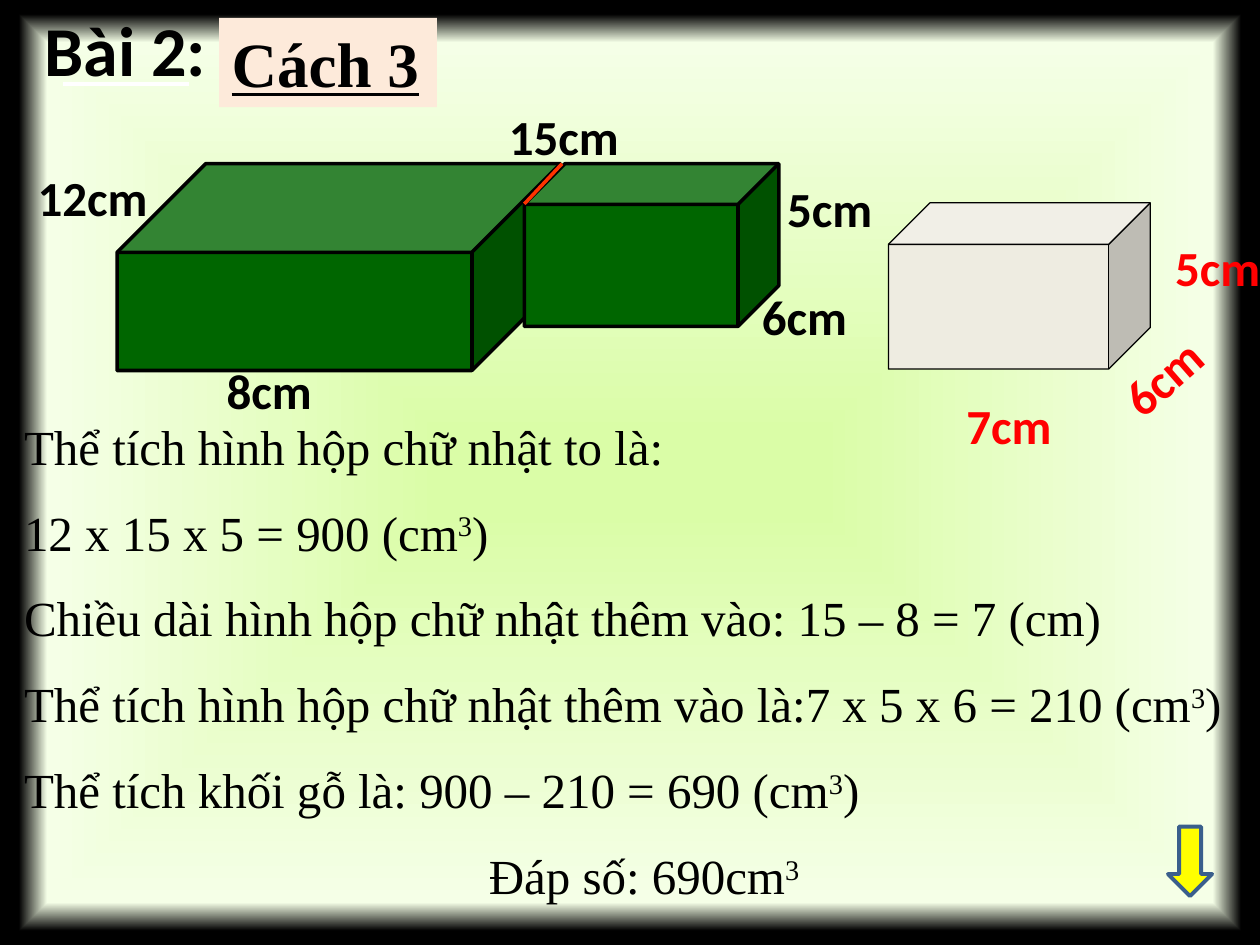
from lxml import etree
from pptx import Presentation
from pptx import util as u
from pptx.dml.color import RGBColor
from pptx.enum import shapes, text
from pptx.oxml import ns, parse_xml

# Content: positions and sizes in centimetres
BACKGROUND = [(8, "DAFDA7"), (91, "F5FFE7"), (97, "000000")]
HEADING = "Bài 2:"
METHOD = "Cách 3"
CUBES = [  # box, depth, fill, line width
    ((2.36, 3.3, 8.94, 4.17), 0.429, "006600", 2),
    ((10.57, 3.3, 5.13, 3.28), 0.25, "006600", 2),
    ((17.91, 4.09, 5.28, 3.35), 0.25, "EEECE1", 0.75),
]
LINES = [  # start, end, colour, width
    ((10.57, 4.11), (11.33, 3.3), "FF3300", 2),
    ((1.27, 1.7), (3.81, 1.7), "FFFFFF", 2.25),
]
LABEL_HEIGHT = 1.45
LABELS = [  # text, left, top, width, colour, rotation
    ("12cm", 0.51, 3.25, 3.81, "000000", 0),
    ("15cm", 10.01, 2.03, 4.09, "000000", 0),
    ("5cm", 15.62, 3.48, 2.49, "000000", 0),
    ("6cm", 15.11, 5.66, 2.31, "000000", 0),
    ("8cm", 4.32, 7.14, 2.34, "000000", 0),
    ("7cm", 19.23, 7.85, 2.46, "FF0000", 0),
    ("5cm", 23.44, 4.67, 2.46, "FF0000", 0),
    ("6cm", 22.2, 6.5, 3.35, "FF0000", 318.7),
]
SOLUTION = [  # text with ^ before a raised 3, left indent
    ("Thể tích hình hộp chữ nhật to là:", 0),
    ("12 x 15 x 5 = 900 (cm^3)", 0),
    ("Chiều dài hình hộp chữ nhật thêm vào: 15 – 8 = 7 (cm)", 0),
    ("Thể tích hình hộp chữ nhật thêm vào là:7 x 5 x 6 = 210 (cm^3)", 0),
    ("Thể tích khối gỗ là: 900 – 210 = 690 (cm^3)", 0),
    ("Đáp số: 690cm^3", 9.37),
]


def color(value):
    return RGBColor.from_string(value)


def lengths(values):
    return [u.Cm(value) for value in values]


def place(shape, box):
    shape.left, shape.top, shape.width, shape.height = lengths(box)


def setup_frame(shape, anchor=text.MSO_ANCHOR.TOP):
    frame = shape.text_frame
    frame.word_wrap = True
    frame.auto_size = text.MSO_AUTO_SIZE.NONE
    frame.vertical_anchor = anchor
    return frame


def style(paragraph, size, name, value="000000", bold=True):
    paragraph.alignment = text.PP_ALIGN.LEFT
    font = paragraph.font
    font.size, font.name, font.bold = u.Pt(size), name, bold
    font.color.rgb = color(value)


def add_shape(slide, kind, box, fill, line=None, width=0):
    shape = slide.shapes.add_shape(kind, *lengths(box))
    shape.shadow.inherit = False
    shape.fill.solid()
    shape.fill.fore_color.rgb = color(fill)
    if line:
        shape.line.color.rgb = color(line)
        shape.line.width = u.Pt(width)
    else:
        shape.line.fill.background()
    return shape


def set_background(slide):
    slide.background.fill.solid()
    properties = slide.background._cSld.bg.bgPr
    stops = "".join(
        f'<a:gs pos="{position * 1000}"><a:srgbClr val="{value}"/></a:gs>'
        for position, value in BACKGROUND)
    gradient = parse_xml(
        f'<a:gradFill {ns.nsdecls("a")} rotWithShape="1"><a:gsLst>{stops}</a:gsLst>'
        '<a:path path="shape"><a:fillToRect l="50000" t="50000" r="50000" b="50000"/>'
        '</a:path></a:gradFill>')
    properties.replace(properties[0], gradient)


def add_solution(body):
    place(body, (0.23, 8.26, 25.04, 10.44))
    frame = setup_frame(body)
    for index, (content, indent) in enumerate(SOLUTION):
        paragraph = frame.add_paragraph() if index else frame.paragraphs[0]
        properties = paragraph._p.get_or_add_pPr()
        properties.set("marL", str(u.Cm(indent)))
        properties.set("indent", "0")
        etree.SubElement(properties, ns.qn("a:buNone"))
        paragraph.space_before = u.Pt(15.5 if index else 0)
        style(paragraph, 28, "Times New Roman", bold=False)
        before, raised, after = content.partition("^")
        paragraph.add_run().text = before
        if raised:
            run = paragraph.add_run()
            run.text = after[0]
            run.font._element.set("baseline", "30000")
        if after[1:]:
            paragraph.add_run().text = after[1:]


def main():
    presentation = Presentation()
    presentation.slide_width, presentation.slide_height = lengths((25.4, 19.05))
    slide = presentation.slides.add_slide(presentation.slide_layouts[1])
    set_background(slide)

    # Heading and worked solution
    title, body = slide.placeholders
    place(title, (0.64, 0, 5.51, 1.96))
    setup_frame(title).text = HEADING
    style(title.text_frame.paragraphs[0], 40, "Calibri")
    add_solution(body)

    # Solids
    for box, depth, fill, width in CUBES:
        cube = add_shape(slide, shapes.MSO_SHAPE.CUBE, box, fill, "000000", width)
        cube.adjustments[0] = depth

    # Dividing edge and heading underline
    for start, end, value, width in LINES:
        line = slide.shapes.add_connector(
            shapes.MSO_CONNECTOR.STRAIGHT, *lengths(start + end))
        line.line.color.rgb = color(value)
        line.line.width = u.Pt(width)
        etree.SubElement(line._element.spPr, ns.qn("a:effectLst"))

    # Dimensions
    for content, left, top, width, value, rotation in LABELS:
        label = slide.shapes.add_textbox(*lengths((left, top, width, LABEL_HEIGHT)))
        label.rotation = rotation
        setup_frame(label).text = content
        style(label.text_frame.paragraphs[0], 28, "Calibri", value)

    # Down arrow and method name
    arrow = add_shape(slide, shapes.MSO_SHAPE.RIGHT_ARROW, (23.29, 16.92, 1.4, 0.89),
                      "FFFF00", "3A5F8C", 2.25)
    arrow.rotation = 90
    method = add_shape(slide, shapes.MSO_SHAPE.RECTANGLE, (4.42, 0.36, 4.39, 1.8), "FDEADA")
    setup_frame(method, text.MSO_ANCHOR.MIDDLE).text = METHOD
    paragraph = method.text_frame.paragraphs[0]
    style(paragraph, 36, "Times New Roman")
    paragraph.font.underline = True

    presentation.save("out.pptx")


if __name__ == "__main__":
    main()
